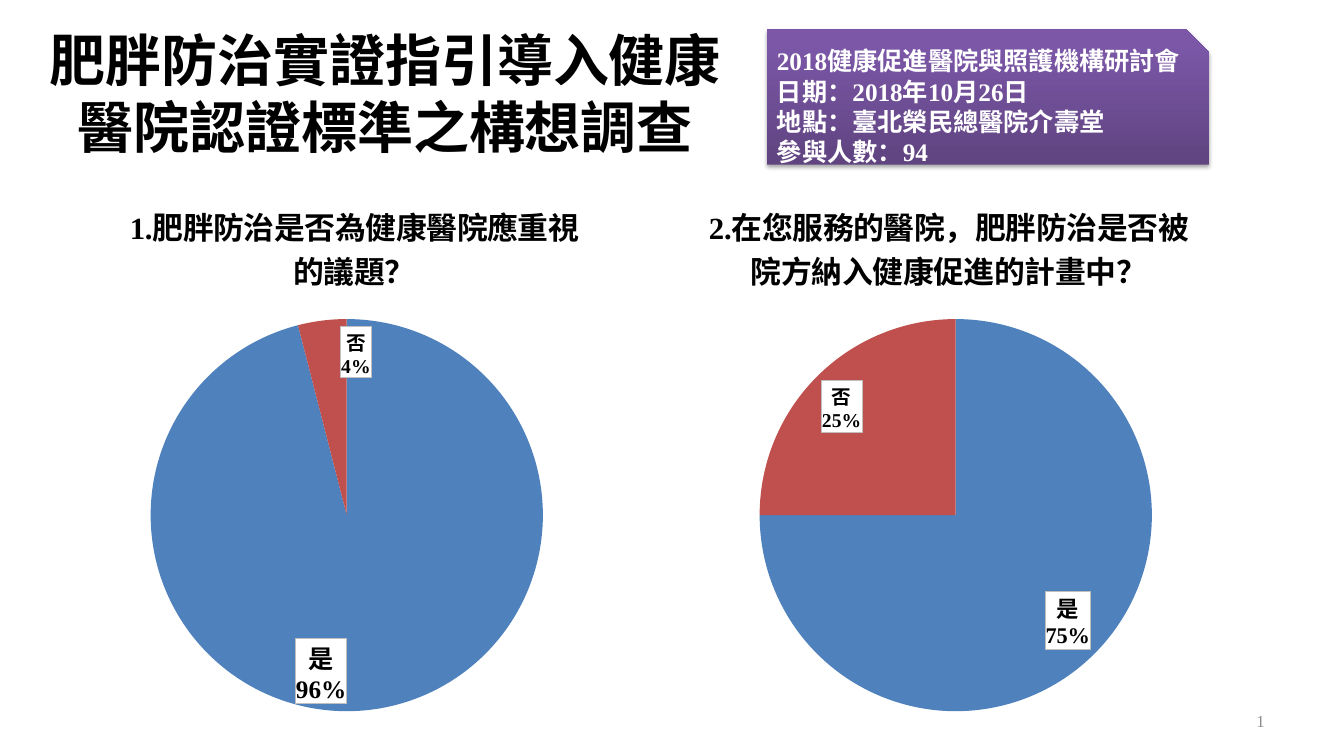
from lxml import etree
from pptx import Presentation
from pptx import util as u
from pptx.chart.data import CategoryChartData
from pptx.dml.color import RGBColor
from pptx.enum import chart as charts, shapes, text
from pptx.oxml import parse_xml
from pptx.oxml.ns import nsdecls, qn

BLACK = RGBColor(0x00, 0x00, 0x00)
WHITE = RGBColor(0xFF, 0xFF, 0xFF)
GREY = RGBColor(0x8C, 0x8C, 0x8C)
BLUE = RGBColor(0x4F, 0x81, 0xBD)
RED = RGBColor(0xC0, 0x50, 0x4D)
DARK_PURPLE = RGBColor(0x5F, 0x44, 0x80)
PURPLE = RGBColor(0x7C, 0x57, 0xA8)
FONT = "Times New Roman"
COLUMNS, ROWS = 160, 90
PIE_DIAMETER, PIE_TOP = 46.7, 0.24  # grid columns, share of chart height


def style_font(font, size, color, bold=False):
    font.name, font.size, font.bold = FONT, u.Pt(size), bold
    font.color.rgb = color


def write(frame, content, size=18, color=BLACK, bold=False,
          align=text.PP_ALIGN.LEFT, line=None):
    """Fill a text frame, one paragraph per line of content."""
    for number, words in enumerate(content.split("\n")):
        para = frame.paragraphs[0] if number == 0 else frame.add_paragraph()
        para.alignment = align
        if line:
            para.line_spacing = u.Pt(line)
        span = para.add_run()
        span.text = words
        style_font(span.font, size, color, bold)


def layout_xml(**values):
    """Manual chart layout, with all values as shares of the chart."""
    target = '<c:layoutTarget val="inner"/>' if "w" in values else ""
    modes = "" if values.pop("offset", False) else (
        '<c:xMode val="edge"/><c:yMode val="edge"/>')
    sizes = "".join(f'<c:{key} val="{value:.3f}"/>' for key, value in values.items())
    return parse_xml(f'<c:layout {nsdecls("c")}><c:manualLayout>{target}{modes}{sizes}'
                     '</c:manualLayout></c:layout>')


def set_layout(element, after=None, **values):
    for old in element.findall(qn("c:layout")):
        element.remove(old)
    index = 0 if after is None else element.index(element.find(qn(after))) + 1
    element.insert(index, layout_xml(**values))


class Page:
    def __init__(self, deck):
        self.column = deck.slide_width / COLUMNS
        self.row = deck.slide_height / ROWS
        self.slide = deck.slides.add_slide(deck.slide_layouts[6])

    def place(self, left, top, width, height):
        return (int(left * self.column), int(top * self.row),
                int(width * self.column), int(height * self.row))

    def text_box(self, area, content, **style):
        box = self.slide.shapes.add_textbox(*self.place(*area))
        frame = box.text_frame
        frame.word_wrap = True
        frame.vertical_anchor = text.MSO_ANCHOR.MIDDLE
        frame.margin_left = frame.margin_right = u.Inches(0.12)
        frame.margin_top = frame.margin_bottom = u.Inches(0.06)
        write(frame, content, **style)
        return box

    def slide_number(self, area, number, **style):
        box = self.text_box(area, number, **style)
        run = box.text_frame.paragraphs[0].runs[0]._r
        run.tag = qn("a:fld")
        run.set("id", "{B6F15528-21DE-4FAA-801E-634DDDAF4B2B}")
        run.set("type", "slidenum")

    def event_card(self, area, content, **style):
        card = self.slide.shapes.add_shape(
            shapes.MSO_SHAPE.SNIP_1_RECTANGLE, *self.place(*area))
        card.line.fill.background()
        card.fill.gradient()
        card.fill.gradient_angle = 90
        for stop, color, position in zip(card.fill.gradient_stops,
                                         (DARK_PURPLE, PURPLE), (0, 0.9)):
            stop.color.rgb, stop.position = color, position
        card.shadow.inherit = False
        card._element.spPr.find(qn("a:effectLst")).append(parse_xml(
            f'<a:outerShdw {nsdecls("a")} blurRad="{u.Pt(3.1)}" dist="{u.Pt(1.8)}" '
            'dir="5400000" rotWithShape="0"><a:srgbClr val="000000">'
            '<a:alpha val="35000"/></a:srgbClr></a:outerShdw>'))
        frame = card.text_frame
        frame.word_wrap = True
        frame.vertical_anchor = text.MSO_ANCHOR.TOP
        frame.margin_right = 0
        write(frame, content, **style)

    def pie(self, area, question, title_left, shares, label_sizes, label_shifts):
        data = CategoryChartData(number_format="0")
        data.categories = ["是", "否"]
        data.add_series("Series 1", shares)
        chart = self.slide.shapes.add_chart(
            charts.XL_CHART_TYPE.PIE, *self.place(*area), data).chart
        chart.has_legend = False
        style_font(chart.font, 10, BLACK)

        # Question as chart title
        chart.has_title = True
        write(chart.chart_title.text_frame, question, size=22, bold=True,
              align=text.PP_ALIGN.CENTER)
        chart.chart_title.include_in_layout = False
        set_layout(chart.chart_title._element, after="c:tx", x=title_left, y=0.015)

        # Round plot area, centred across the chart
        width, height = PIE_DIAMETER / area[2], PIE_DIAMETER / area[3]
        set_layout(chart._chartSpace.chart.plotArea,
                   x=0.5 - width / 2, y=PIE_TOP, w=width, h=height)

        # Slices and their labels
        plot = chart.plots[0]
        plot.vary_by_categories = True
        for index, color in enumerate((BLUE, RED)):
            point = plot.series[0].points[index]
            point.format.fill.solid()
            point.format.fill.fore_color.rgb = color
            self.slice_label(point.data_label, label_sizes[index], label_shifts[index])

    def slice_label(self, label, size, shift):
        style_font(label.font, size, BLACK, bold=True)
        label.position = charts.XL_LABEL_POSITION.INSIDE_END
        element = label._dLbl
        for name, shown in (("Val", 0), ("CatName", 1), ("Percent", 1)):
            element.find(qn(f"c:show{name}")).set("val", str(shown))
        properties = element.find(qn("c:txPr"))
        properties.addprevious(parse_xml(
            f'<c:numFmt {nsdecls("c")} formatCode="0%" sourceLinked="0"/>'))
        properties.addprevious(parse_xml(
            f'<c:spPr {nsdecls("c", "a")}><a:solidFill><a:srgbClr val="{WHITE}"/></a:solidFill>'
            '<a:ln w="9525"><a:solidFill><a:srgbClr val="BFBFBF"/></a:solidFill></a:ln></c:spPr>'))
        etree.SubElement(element, qn("c:separator")).text = "\n"
        if shift:
            set_layout(element, after="c:idx", offset=True, x=shift, y=0)


def main():
    deck = Presentation()
    deck.slide_width, deck.slide_height = u.Inches(13.33), u.Inches(7.5)
    page = Page(deck)

    # Heading and page number
    page.text_box((3, 3.5, 85.7, 15), "肥胖防治實證指引導入健康醫院認證標準之構想調查",
                  size=40, bold=True, align=text.PP_ALIGN.CENTER, line=48)
    page.slide_number((114.7, 83.4, 37.3, 4.8), "29", size=12, color=GREY,
                      align=text.PP_ALIGN.RIGHT)

    # Survey results
    page.pie((5.9, 22.7, 70.7, 63.7), "1.肥胖防治是否為健康醫院應重視\n的議題？",
             0.13, (96, 4), (18, 14), (-0.04, 0.03))
    page.pie((76.6, 22.7, 74.3, 63.7), "2.在您服務的醫院，肥胖防治是否被\n院方納入健康促進的計畫中？",
             0.1, (75, 25), (16, 14), (0, 0))

    # Event details
    page.event_card((91.3, 3.5, 52.6, 16.1),
                    "2018健康促進醫院與照護機構研討會\n日期：2018年10月26日\n"
                    "地點：臺北榮民總醫院介壽堂\n參與人數：94",
                    size=18, color=WHITE, bold=True, line=21.6)
    deck.save("out.pptx")


if __name__ == "__main__":
    main()
